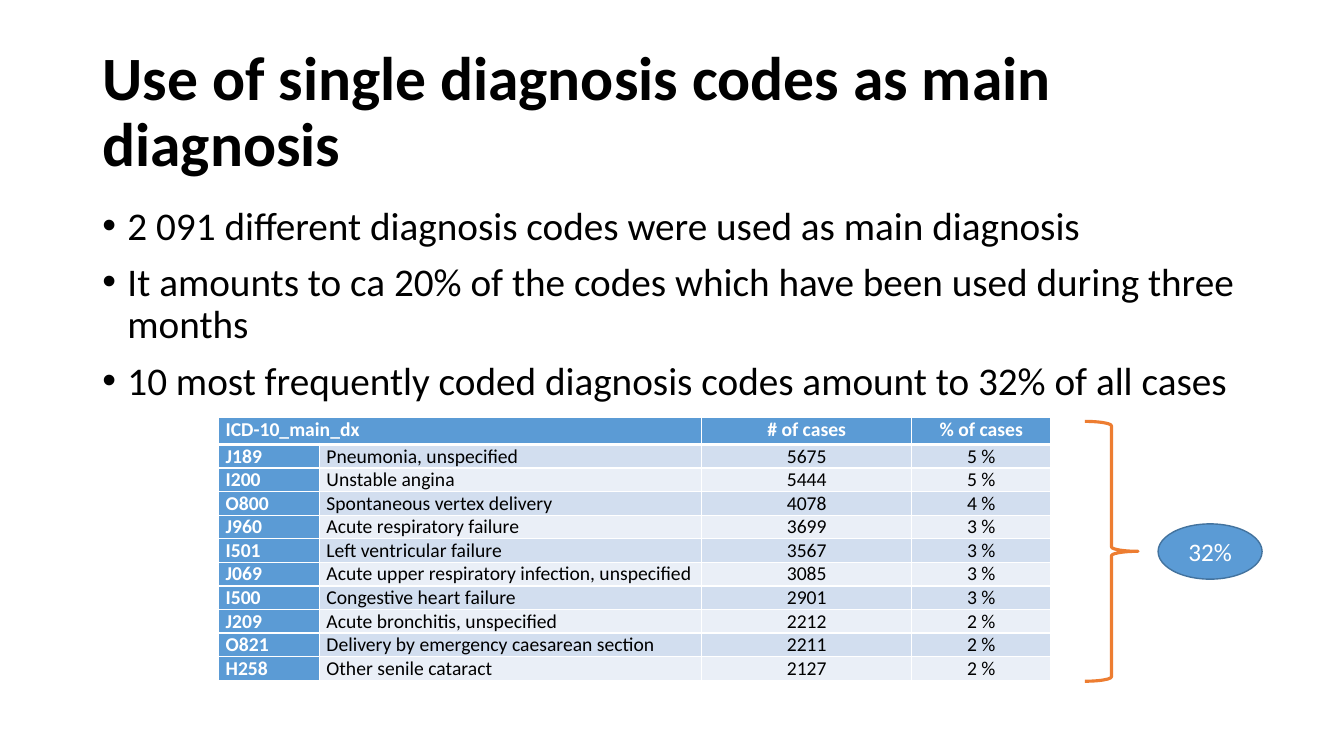
from dataclasses import dataclass

from lxml import etree
from pptx import Presentation
from pptx import util as u
from pptx.dml.color import RGBColor
from pptx.enum import shapes, text
from pptx.oxml import ns

Pt = u.Pt
FONT = "Calibri"
BLACK = RGBColor(0x00, 0x00, 0x00)
WHITE = RGBColor(0xFF, 0xFF, 0xFF)
BLUE = RGBColor(0x5B, 0x9B, 0xD5)
DARK_BLUE = RGBColor(0x43, 0x73, 0x9E)
ORANGE = RGBColor(0xED, 0x7D, 0x31)
BANDS = (RGBColor(0xD2, 0xDE, 0xEF), RGBColor(0xEA, 0xEF, 0xF7))
LEFT, CENTER = text.PP_ALIGN.LEFT, text.PP_ALIGN.CENTER


@dataclass(frozen=True)
class Box:
    left: float
    top: float
    width: float
    height: float

    def lengths(self) -> tuple:
        return Pt(self.left), Pt(self.top), Pt(self.width), Pt(self.height)


@dataclass(frozen=True)
class Diagnosis:
    code: str
    name: str
    cases: int
    percent: int

    def texts(self) -> tuple:
        return self.code, self.name, str(self.cases), f"{self.percent} %"


TITLE = "Use of single diagnosis codes as main diagnosis"
BULLETS = (
    "2 091 different diagnosis codes were used as main diagnosis",
    "It amounts to ca 20% of the codes which have been used during three months",
    "10 most frequently coded diagnosis codes amount to 32% of all cases",
)
HEADER = ("ICD-10_main_dx", "", "# of cases", "% of cases")
DIAGNOSES = (
    Diagnosis("J189", "Pneumonia, unspecified", 5675, 5),
    Diagnosis("I200", "Unstable angina", 5444, 5),
    Diagnosis("O800", "Spontaneous vertex delivery", 4078, 4),
    Diagnosis("J960", "Acute respiratory failure", 3699, 3),
    Diagnosis("I501", "Left ventricular failure", 3567, 3),
    Diagnosis("J069", "Acute upper respiratory infection, unspecified", 3085, 3),
    Diagnosis("I500", "Congestive heart failure", 2901, 3),
    Diagnosis("J209", "Acute bronchitis, unspecified", 2212, 2),
    Diagnosis("O821", "Delivery by emergency caesarean section", 2211, 2),
    Diagnosis("H258", "Other senile cataract", 2127, 2),
)
COLUMN_WIDTHS = (72, 273, 150.2, 99.2)
HEADER_HEIGHT, ROW_HEIGHT = 19.2, 14.4


def set_attributes(target, **values) -> None:
    for name, value in values.items():
        setattr(target, name, value)


def write(paragraph, content: str, size: float, color: RGBColor,
          bold: bool = False, **paragraph_format) -> None:
    set_attributes(paragraph, **paragraph_format)
    run = paragraph.add_run()
    run.text = content
    set_attributes(run.font, name=FONT, size=Pt(size), bold=bold)
    run.font.color.rgb = color


def add_bullet(paragraph) -> None:
    properties = paragraph._p.get_or_add_pPr()
    properties.set("marL", str(Pt(18)))
    properties.set("indent", str(-Pt(18)))
    etree.SubElement(properties, ns.qn("a:buFont"), typeface="Arial")
    etree.SubElement(properties, ns.qn("a:buChar"), char="•")


def add_borders(cell, **widths: float) -> None:
    """Draw white borders; keys are the sides L, R, T and B, values are points."""
    properties = cell._tc.get_or_add_tcPr()
    for side, width in widths.items():
        line = etree.SubElement(properties, ns.qn(f"a:ln{side}"), w=str(Pt(width)))
        fill = etree.SubElement(line, ns.qn("a:solidFill"))
        etree.SubElement(fill, ns.qn("a:srgbClr"), val=str(WHITE))


def add_title(slide) -> None:
    title = slide.shapes.title
    left, top, width, height = Box(66, 28.75, 828, 104.4).lengths()
    set_attributes(title, left=left, top=top, width=width, height=height)
    set_attributes(title.text_frame, word_wrap=True, auto_size=text.MSO_AUTO_SIZE.NONE,
                   vertical_anchor=text.MSO_ANCHOR.MIDDLE)
    write(title.text_frame.paragraphs[0], TITLE, 44, BLACK, True,
          alignment=LEFT, line_spacing=0.9)


def add_bullets(slide) -> None:
    frame = slide.shapes.add_textbox(*Box(66, 143.75, 828, 342.6).lengths()).text_frame
    frame.word_wrap = True
    for index, content in enumerate(BULLETS):
        paragraph = frame.add_paragraph() if index else frame.paragraphs[0]
        write(paragraph, content, 28, BLACK, line_spacing=0.9, space_before=Pt(10))
        add_bullet(paragraph)


def add_diagnosis_table(slide) -> None:
    rows = (HEADER, *(diagnosis.texts() for diagnosis in DIAGNOSES))
    box = Box(156.2, 298.3, sum(COLUMN_WIDTHS), HEADER_HEIGHT + ROW_HEIGHT * len(DIAGNOSES))
    table = slide.shapes.add_table(len(rows), len(COLUMN_WIDTHS), *box.lengths()).table
    table.first_col = True
    for column, width in zip(table.columns, COLUMN_WIDTHS):
        column.width = Pt(width)
    for r, values in enumerate(rows):
        table.rows[r].height = Pt(ROW_HEIGHT if r else HEADER_HEIGHT)
        for c, value in enumerate(values):
            cell = table.cell(r, c)
            heading = r == 0 or c == 0
            set_attributes(cell, margin_left=Pt(5), margin_right=Pt(5),
                           margin_top=0, margin_bottom=0)
            add_borders(cell, L=1, R=1, T=3 if r == 1 else 1, B=1 if r else 3)
            cell.fill.solid()
            cell.fill.fore_color.rgb = BLUE if heading else BANDS[(r - 1) % 2]
            if value:
                write(cell.text_frame.paragraphs[0], value, 14,
                      WHITE if heading else BLACK, heading,
                      alignment=CENTER if c > 1 else LEFT)
    table.cell(0, 0).merge(table.cell(0, 1))


def add_outlined_shape(slide, kind, box: Box, color: RGBColor, width: float):
    shape = slide.shapes.add_shape(kind, *box.lengths())
    shape.shadow.inherit = False
    shape.line.color.rgb = color
    shape.line.width = Pt(width)
    return shape


def add_share_callout(slide) -> None:
    brace = add_outlined_shape(slide, shapes.MSO_SHAPE.RIGHT_BRACE,
                               Box(774.9, 301, 38, 185.6), ORANGE, 2.25)
    brace.fill.background()
    share = add_outlined_shape(slide, shapes.MSO_SHAPE.OVAL,
                               Box(827.2, 374.2, 74.3, 39.5), DARK_BLUE, 1)
    share.fill.solid()
    share.fill.fore_color.rgb = BLUE
    share.text_frame.vertical_anchor = text.MSO_ANCHOR.MIDDLE
    write(share.text_frame.paragraphs[0], "32%", 18, WHITE, alignment=CENTER)


def main() -> None:
    presentation = Presentation()
    set_attributes(presentation, slide_width=Pt(960), slide_height=Pt(540))
    slide = presentation.slides.add_slide(presentation.slide_layouts.get_by_name("Title Only"))
    add_title(slide)
    add_bullets(slide)
    add_diagnosis_table(slide)
    add_share_callout(slide)
    presentation.save("out.pptx")


if __name__ == "__main__":
    main()
